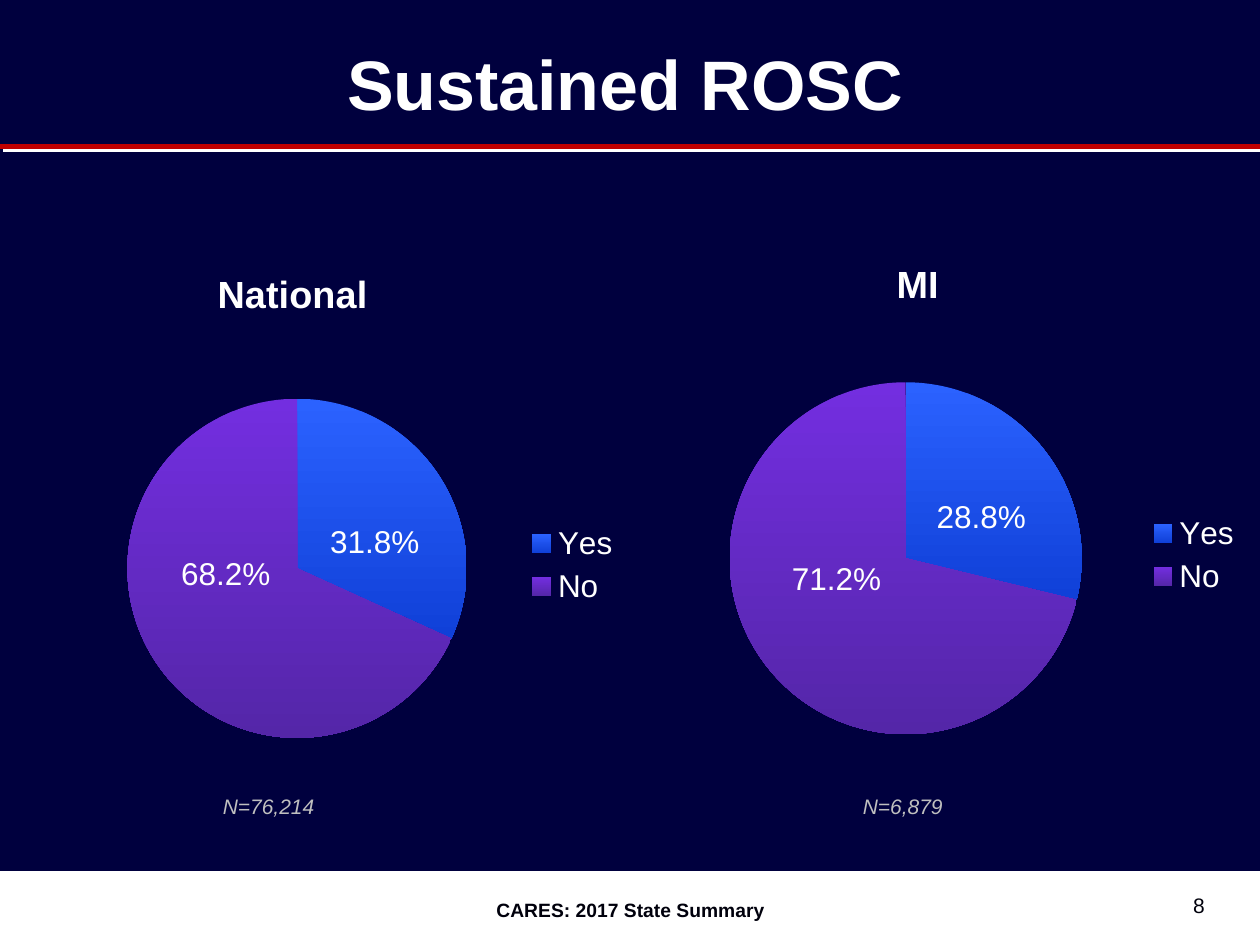
from lxml import etree
from pptx import Presentation
from pptx.chart.data import CategoryChartData as ChartData
from pptx.dml.color import RGBColor as RGB
from pptx.enum.chart import XL_CHART_TYPE as Kind, XL_LEGEND_POSITION as Spot
from pptx.enum.shapes import MSO_CONNECTOR as Link, MSO_SHAPE as Form
from pptx.enum.text import MSO_ANCHOR as Anchor, PP_ALIGN as Align
from pptx.oxml import parse_xml
from pptx.oxml.ns import nsdecls, qn
from pptx.util import Inches, Pt

NAVY = RGB(0x00, 0x00, 0x3E)
WHITE = RGB(0xFF, 0xFF, 0xFF)
INK = RGB(0x00, 0x00, 0x0C)
GREY = RGB(0xBF, 0xBF, 0xBF)
RED = RGB(0xC0, 0x00, 0x00)
SHADES = [(RGB(0x2B, 0x62, 0xFF), RGB(0x10, 0x40, 0xD8)),
          (RGB(0x73, 0x2E, 0xE0), RGB(0x54, 0x26, 0xA8))]


def write(shape, text, size, color, align=Align.LEFT, anchor=Anchor.TOP, **style):
    frame = shape.text_frame
    frame.word_wrap = True
    frame.vertical_anchor = anchor
    para = frame.paragraphs[0]
    para.text = text
    para.alignment = align
    for key, value in {"name": "Arial", "size": Pt(size), **style}.items():
        setattr(para.font, key, value)
    para.font.color.rgb = color


def layout(x, y, w=None, h=None, inner=False):
    # Place a chart part by fractions of the chart
    tags = '<c:layoutTarget val="inner"/>' if inner else ""
    if w or inner:
        tags += '<c:xMode val="edge"/><c:yMode val="edge"/>'
    for tag, value in zip("xywh", (x, y, w, h)):
        if value is not None:
            tags += f'<c:{tag} val="{value}"/>'
    return parse_xml(f'<c:layout {nsdecls("c")}><c:manualLayout>{tags}'
                     '</c:manualLayout></c:layout>')


deck = Presentation()
deck.slide_width, deck.slide_height = Inches(10), Inches(7.5)
slide = deck.slides.add_slide(deck.slide_layouts[5])
slide.background.fill.solid()
slide.background.fill.fore_color.rgb = NAVY
shapes = slide.shapes

# Footer band
band = shapes.add_shape(Form.RECTANGLE, 0, Inches(6.92), Inches(10), Inches(0.58))
band.shadow.inherit = False
band.fill.solid()
band.fill.fore_color.rgb = WHITE
band.line.color.rgb = WHITE
foot = shapes.add_textbox(Inches(3.42), Inches(7.08), Inches(3.17), Inches(0.29))
write(foot, "CARES: 2017 State Summary", 11, INK, Align.CENTER, bold=True)
page = shapes.add_textbox(Inches(7.33), Inches(7), Inches(2.33), Inches(0.33))
write(page, "8", 12, INK, Align.RIGHT, Anchor.BOTTOM)

# Title
title = shapes.title
title.left, title.top = Inches(0.13), Inches(0.03)
title.width, title.height = Inches(9.66), Inches(1.25)
write(title, "Sustained ROSC", 40, WHITE, Align.CENTER, Anchor.MIDDLE, bold=True)

# Red rule with a hard white shadow
rule = shapes.add_connector(Link.STRAIGHT, 0, Inches(1.16), Inches(10), Inches(1.16))
rule.line.color.rgb = RED
rule.line.width = Pt(3)
rule._element.spPr.append(parse_xml(
    f'<a:effectLst {nsdecls("a")}><a:outerShdw dist="{Pt(2.8)}" dir="2700000" '
    'algn="ctr" rotWithShape="0"><a:srgbClr val="FFFFFF"/></a:outerShdw></a:effectLst>'))

# Pies: name, left, top, values, plot, title and legend places, label shifts, count
pies = [
    ("MI", 5.08, 1.42, (28.8, 71.2), (0.14, 0.3, 0.55, 0.53), (0.39, 0.11),
     (0.78, 0.49), [(0.01, 0.02), (0, -0.05)], "N=6,879", 6.75),
    ("National", 0.25, 1.5, (31.8, 68.2), (0.15, 0.31, 0.53, 0.51), (0.28, 0.11),
     (0.76, 0.49), [(0.01, 0.03), (0, -0.06)], "N=76,214", 1.67),
]
for name, left, top, values, plot, head, key, shifts, count, note_x in pies:
    data = ChartData()
    data.categories = ["Yes", "No"]
    data.add_series("Series 1", values)
    chart = shapes.add_chart(Kind.PIE, Inches(left), Inches(top),
                             Inches(5.08), Inches(5.33), data).chart
    chart.font.name = "Arial"
    chart.font.size = Pt(18)
    chart.font.color.rgb = WHITE

    chart.has_title = True
    para = chart.chart_title.text_frame.paragraphs[0]
    para.text = name
    for attr, value in {"name": "Arial", "size": Pt(21.6), "bold": True}.items():
        setattr(para.font, attr, value)
    para.font.color.rgb = WHITE
    chart.has_legend = True
    chart.legend.position = Spot.RIGHT
    chart.legend.include_in_layout = False

    # Slices and percentages
    pie = chart.plots[0]
    pie.vary_by_categories = True
    pie.has_data_labels = True
    series = pie.series[0]
    labels = series.data_labels
    labels.show_percentage = True
    labels.show_value = False
    labels.number_format = "0.0%"
    labels.number_format_is_linked = False
    for i, (shade, shift) in enumerate(zip(SHADES, shifts)):
        fill = series.points[i].format.fill
        fill.gradient()
        fill.gradient_angle = 270
        for stop, color in zip(fill.gradient_stops, shade):
            stop.color.rgb = color
        label = parse_xml(
            f'<c:dLbl {nsdecls("c")}><c:idx val="{i}"/>'
            '<c:numFmt formatCode="0.0%" sourceLinked="0"/><c:dLblPos val="ctr"/>'
            '<c:showLegendKey val="0"/><c:showVal val="0"/><c:showCatName val="0"/>'
            '<c:showSerName val="0"/><c:showPercent val="1"/><c:showBubbleSize val="0"/>'
            '</c:dLbl>')
        label.insert(1, layout(*shift))
        labels._element.insert(i, label)

    # Places of the chart parts
    area = chart._chartSpace.chart.plotArea
    heading = chart.chart_title._element
    legend = chart.legend._element
    for part in (area, heading, legend):
        for old in part.findall(qn("c:layout")):
            part.remove(old)
    area.insert(0, layout(*plot, inner=True))
    spot = layout(*head)
    for tag in ("c:yMode", "c:xMode"):
        mode = etree.Element(qn(tag), val="edge")
        spot[0].insert(0, mode)
    heading.find(qn("c:tx")).addnext(spot)
    legend.find(qn("c:legendPos")).addnext(layout(*key, 0.17, 0.14))

    note = shapes.add_textbox(Inches(note_x), Inches(6.25), Inches(1.43), Inches(0.3))
    write(note, count, 12, GREY, italic=True)

deck.save("out.pptx")
